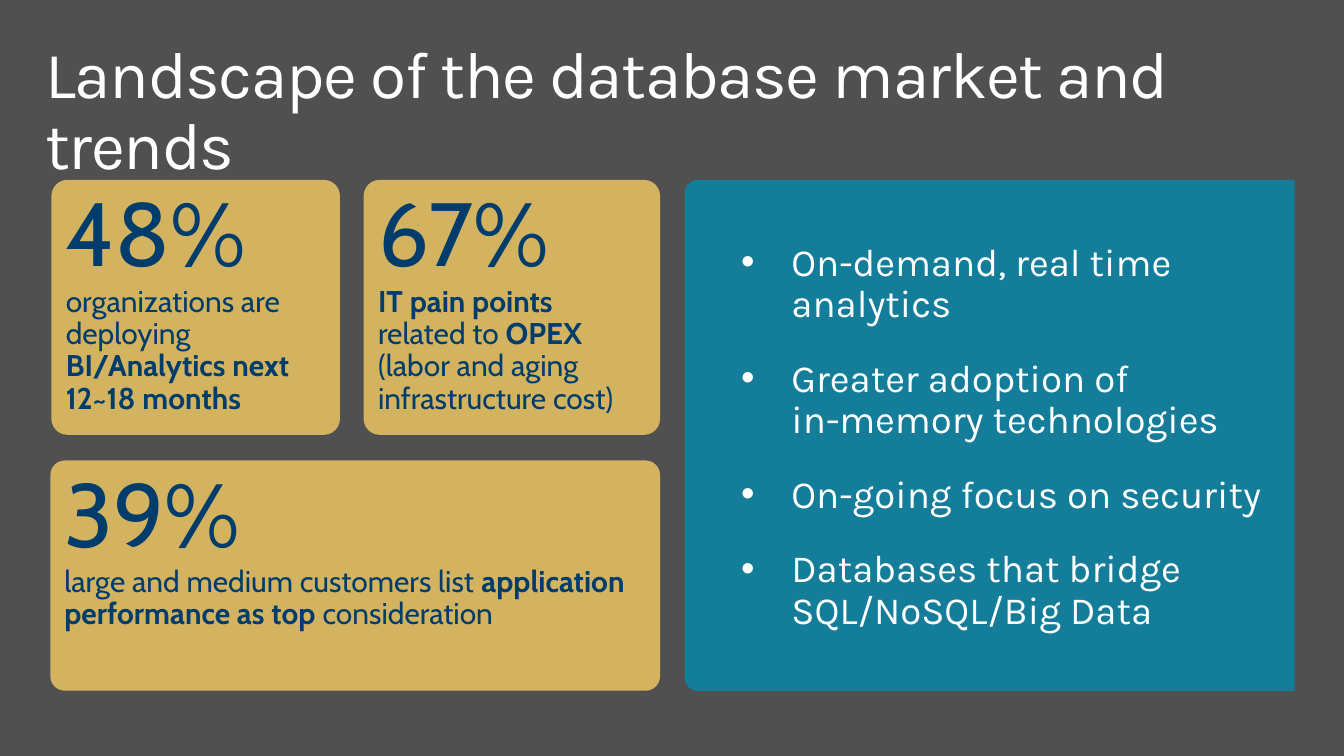
from lxml import etree
from pptx import Presentation
from pptx import util as u
from pptx.dml.color import RGBColor
from pptx.enum import shapes, text
from pptx.oxml.ns import qn

PX = 9144  # EMU per px, 100 px to the inch
WHITE, NAVY, GOLD, TEAL = "FFFFFF", "003C6C", "FFD566", "008DB5"


def paint(fill, color, opacity=100):
    fill.solid()
    fill.fore_color.rgb = RGBColor.from_string(color)
    if opacity < 100:
        color_node = fill._xPr.find(qn("a:solidFill"))[0]
        etree.SubElement(color_node, qn("a:alpha"), val=str(opacity * 1000))


def add_span(para, words, font, size, color, bold=False):
    span = para.add_run()
    span.text = words
    for name, value in {"name": font, "size": u.Pt(size), "bold": bold}.items():
        setattr(span.font, name, value)
    paint(span.font.fill, color)
    return span


deck = Presentation()
deck.slide_width, deck.slide_height = 1360 * PX, 765 * PX
page = deck.slides.add_slide(deck.slide_layouts[6])
paint(page.background.fill, "505050")

# Teal panel, turned so its rounded corners face left
panel = page.shapes.add_shape(
    shapes.MSO_SHAPE.ROUND_2_SAME_RECTANGLE, 743 * PX, 132 * PX, 517 * PX, 617 * PX)
panel.rotation = 270
panel.adjustments[0], panel.adjustments[1] = 0.025, 0
panel.shadow.inherit = False
panel.line.fill.background()
paint(panel.fill, TEAL, 74)

# Trend bullets
trends = [
    ["On-demand, real time ", "analytics"],
    ["Greater adoption of ", "in-memory technologies"],
    ["On-going focus on security"],
    ["Databases that bridge SQL/NoSQL/Big Data"],
]
box = page.shapes.add_textbox(740 * PX, 241 * PX, 558 * PX, 421 * PX)
frame = box.text_frame
frame.word_wrap = True
for index, lines in enumerate(trends):
    para = frame.add_paragraph() if index else frame.paragraphs[0]
    para.line_spacing, para.space_before = 0.9, u.Pt(24)
    properties = para._p.get_or_add_pPr()
    properties.set("marL", str(51 * PX))
    properties.set("indent", str(-51 * PX))
    bullet_color = etree.SubElement(properties, qn("a:buClr"))
    etree.SubElement(bullet_color, qn("a:srgbClr"), val=WHITE)
    etree.SubElement(properties, qn("a:buFont"), typeface="Arial")
    etree.SubElement(properties, qn("a:buChar"), char="•")
    for number, line in enumerate(lines):
        if number:
            para.add_line_break()
        add_span(para, line, "Karla", 28, WHITE)

# Title
title = page.shapes.add_textbox(30 * PX, 32 * PX, 1300 * PX, 100 * PX)
frame = title.text_frame
title_format = {
    "word_wrap": True, "margin_left": 16 * PX, "margin_right": 16 * PX,
    "margin_top": 10 * PX, "margin_bottom": 10 * PX,
}
for name, value in title_format.items():
    setattr(frame, name, value)
para = frame.paragraphs[0]
para.line_spacing = 0.9
span = add_span(para, "Landscape of the database market and trends", "Karla", 48, WHITE)
span.font._element.set("spc", "-100")

# Statistic cards: place, figure, then (words, bold) pieces
cards = [
    ((51, 466, 617, 233), "39%", [
        ("large and medium customers list ", False),
        ("application performance as top ", True), ("consideration", False)]),
    ((368, 182, 300, 258), "67%", [
        ("IT pain points ", True), ("related to ", False), ("OPEX", True),
        (" (labor and aging infrastructure cost)", False)]),
    ((52, 182, 292, 258), "48%", [
        ("organizations are deploying ", False),
        ("BI/Analytics next 12~18 months", True)]),
]
for place, figure, pieces in cards:
    card = page.shapes.add_shape(
        shapes.MSO_SHAPE.ROUNDED_RECTANGLE, *(length * PX for length in place))
    card.adjustments[0] = 0.063
    card.shadow.inherit = False
    card.line.fill.background()
    paint(card.fill, GOLD, 75)
    frame = card.text_frame
    frame.word_wrap = True
    frame.vertical_anchor = text.MSO_ANCHOR.TOP
    para = frame.paragraphs[0]
    card_format = {
        "alignment": text.PP_ALIGN.LEFT, "line_spacing": 0.9,
        "space_before": u.Pt(1.4), "space_after": u.Pt(1.4),
    }
    for name, value in card_format.items():
        setattr(para, name, value)
    add_span(para, figure, "Cabin", 65.3, NAVY)
    para.add_line_break()
    for words, bold in pieces:
        add_span(para, words, "Cabin", 21.8, NAVY, bold)

deck.save("out.pptx")
